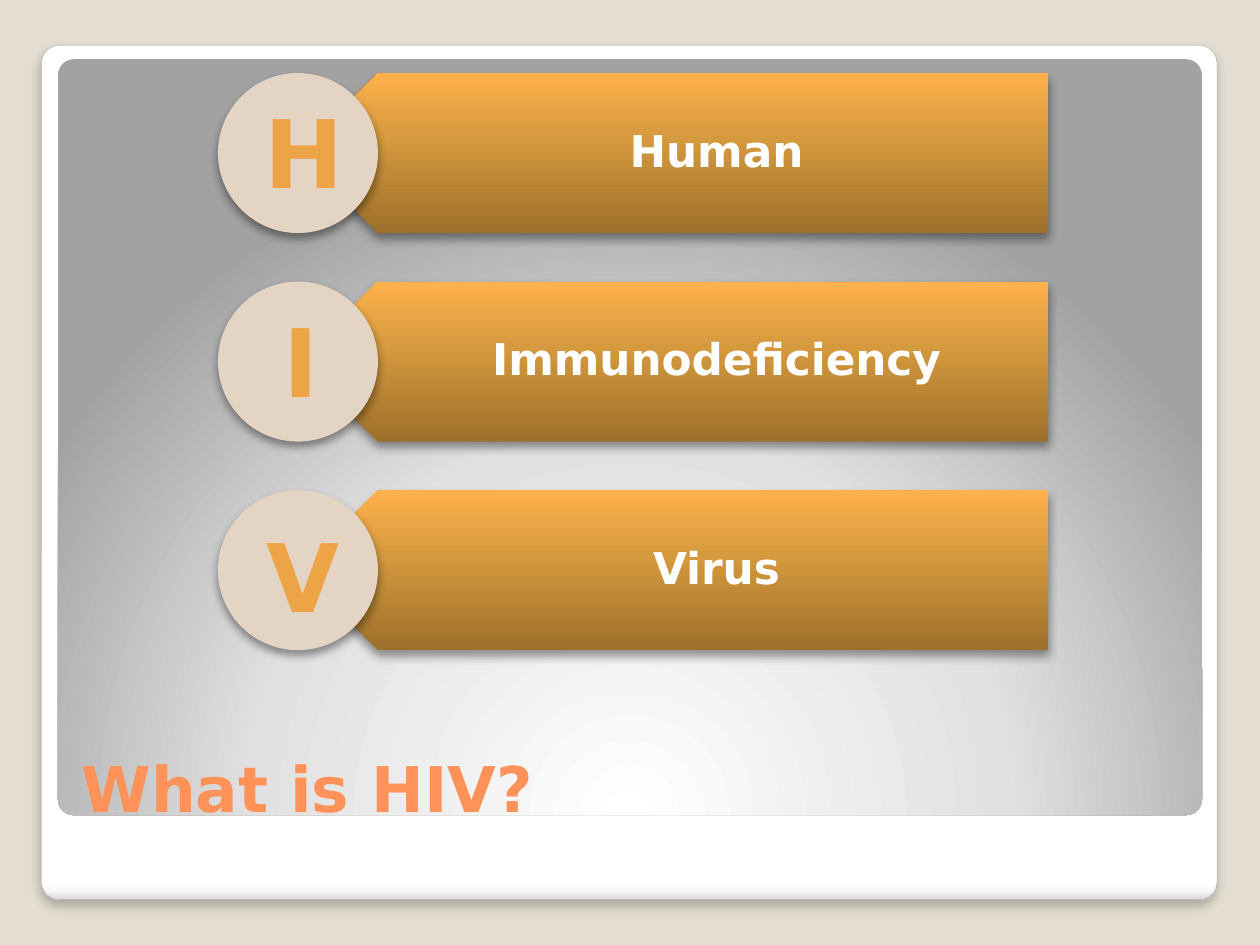
from lxml import etree
from pptx import Presentation
from pptx.dml.color import RGBColor
from pptx.enum.shapes import MSO_SHAPE
from pptx.enum.text import MSO_ANCHOR, MSO_AUTO_SIZE, PP_ALIGN
from pptx.oxml.ns import qn
from pptx.util import Inches, Pt

ROUNDED = MSO_SHAPE.ROUNDED_RECTANGLE
PENTAGON = MSO_SHAPE.PENTAGON
OVAL = MSO_SHAPE.OVAL
MIDDLE, BOTTOM = MSO_ANCHOR.MIDDLE, MSO_ANCHOR.BOTTOM
CENTER = PP_ALIGN.CENTER

FONT = "DejaVu Sans"
FRAME_STOPS = [(0, "FFFFFF"), (98, "FFFFFF"), (99, "F7F7F7"), (100, "DADADA")]
PANEL_STOPS = [(0, "FFFFFF"), (55, "E1E1E1"), (100, "A2A2A2")]
BAR_STOPS = [(0, "9D702B"), (60, "D69A3E"), (100, "FFB14C")]

# letter, word, then the letter box's offset from its row and its width
ROWS = [
    ("H", "Human", 0.27, 0.12, 0.68),
    ("I", "Immunodeficiency", 0.42, 0.12, 0.40),
    ("V", "Virus", 0.29, 0.17, 0.65),
]


def rgb(color):
    return RGBColor.from_string(color)


def add_child(parent, tag, **attributes):
    child = etree.SubElement(parent, qn(tag))
    for name, value in attributes.items():
        child.set(name, str(value))
    return child


def fill_gradient(shape, stops, angle=None):
    """Fill linearly at the angle, or in circles from the bottom centre without one."""
    shape.fill.gradient()
    gradient = shape._element.spPr.find(qn("a:gradFill"))
    for child in list(gradient):
        gradient.remove(child)
    stop_list = add_child(gradient, "a:gsLst")
    for position, color in stops:
        stop = add_child(stop_list, "a:gs", pos=position * 1000)
        add_child(stop, "a:srgbClr", val=color)
    if angle is None:
        circle = add_child(gradient, "a:path", path="circle")
        add_child(circle, "a:fillToRect", l=50000, t=175000, r=50000, b=-75000)
    else:
        add_child(gradient, "a:lin", ang=angle * 60000, scaled=0)


def add_shadow(shape, opacity, blur, distance):
    effects = shape._element.spPr.find(qn("a:effectLst"))
    shadow = add_child(effects, "a:outerShdw", blurRad=Pt(blur), dist=Pt(distance),
                       dir=90 * 60000, algn="ctr", rotWithShape=0)
    color = add_child(shadow, "a:srgbClr", val="000000")
    add_child(color, "a:alpha", val=opacity * 1000)


def add_plain_shape(shapes, kind, left, top, width, height):
    shape = shapes.add_shape(kind, Inches(left), Inches(top), Inches(width), Inches(height))
    shape.shadow.inherit = False
    shape.line.fill.background()
    return shape


def add_text(shapes, text, left, top, width, height, size, color):
    box = shapes.add_textbox(Inches(left), Inches(top), Inches(width), Inches(height))
    text_frame = box.text_frame
    text_frame.text = text
    text_frame.word_wrap = True
    font = text_frame.paragraphs[0].runs[0].font
    font.name, font.size, font.bold = FONT, Pt(size), True
    font.color.rgb = rgb(color)
    return text_frame


def add_frame(slide, left, top, width, height):
    frame = add_plain_shape(slide.shapes, ROUNDED, left, top, width, height)
    frame.adjustments[0] = 0.021
    fill_gradient(frame, FRAME_STOPS, 90)
    frame.line.color.rgb = rgb("A4A4A4")
    frame.line.width = Pt(0.16)
    add_shadow(frame, 25, 6, 4)

    panel = add_plain_shape(slide.shapes, ROUNDED, left + 0.13, top + 0.11, width - 0.25, 6)
    panel.adjustments[0] = 0.021
    fill_gradient(panel, PANEL_STOPS)


def add_title(slide, left, top, width, height):
    text_frame = add_text(slide.shapes, "What is HIV?", left, top, width, height, 36, "FF9258")
    text_frame.vertical_anchor = BOTTOM


def add_word_row(shapes, word, left, top, width, height):
    """Place a bar pointing left, its word, and the circle over its tip."""
    bar_left = left + height / 2
    bar = add_plain_shape(shapes, PENTAGON, bar_left, top, width - height / 2, height)
    bar._element.spPr.find(qn("a:xfrm")).set("flipH", "1")
    fill_gradient(bar, BAR_STOPS, 270)
    add_shadow(bar, 40, 5.2, 3)

    text_left = bar_left + height / 4
    text_frame = add_text(shapes, word, text_left, top, left + width - text_left, height,
                          25, "FFFFFF")
    text_frame.vertical_anchor = MIDDLE
    text_frame.margin_left, text_frame.margin_right = Inches(0.56), Inches(0.19)
    text_frame.margin_top = text_frame.margin_bottom = Inches(0.1)
    text_frame.paragraphs[0].alignment = CENTER
    text_frame.paragraphs[0].line_spacing = 0.9

    circle = add_plain_shape(shapes, OVAL, left, top, height, height)
    circle.fill.solid()
    circle.fill.fore_color.rgb = rgb("E3D4C4")
    add_shadow(circle, 40, 5.2, 3)


def add_letter(slide, letter, left, top, width):
    text_frame = add_text(slide.shapes, letter, left, top, width, 1.01, 54, "ECA446")
    text_frame.word_wrap = False
    text_frame.auto_size = MSO_AUTO_SIZE.SHAPE_TO_FIT_TEXT
    text_frame.paragraphs[0].alignment = CENTER


def add_acronym(slide, left, top, width, height):
    row_height = 1.27
    pitch = (height - row_height) / (len(ROWS) - 1)
    group = slide.shapes.add_group_shape()
    for index, (letter, word, dx, dy, letter_width) in enumerate(ROWS):
        row_top = top + index * pitch
        add_word_row(group.shapes, word, left, row_top, width, row_height)
        add_letter(slide, letter, left + dx, row_top + dy, letter_width)


def main():
    presentation = Presentation()
    presentation.slide_width, presentation.slide_height = Inches(10), Inches(7.5)
    slide = presentation.slides.add_slide(presentation.slide_layouts[6])
    slide.background.fill.solid()
    slide.background.fill.fore_color.rgb = rgb("E3DED1")
    add_frame(slide, 0.33, 0.36, 9.33, 6.78)
    add_title(slide, 0.55, 5.45, 8.95, 1.15)
    add_acronym(slide, 1.73, 0.58, 6.59, 4.58)
    presentation.save("out.pptx")


if __name__ == "__main__":
    main()
